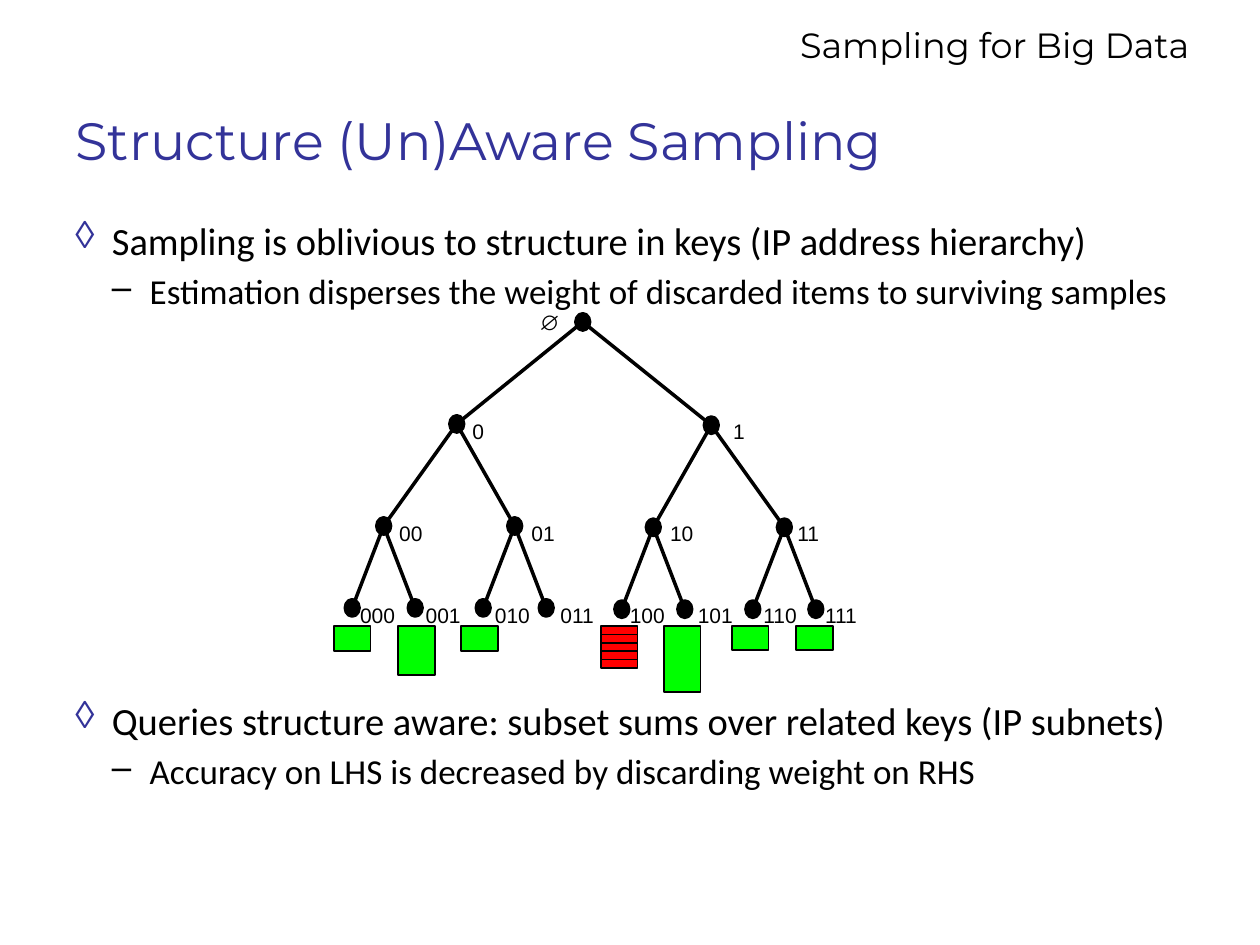
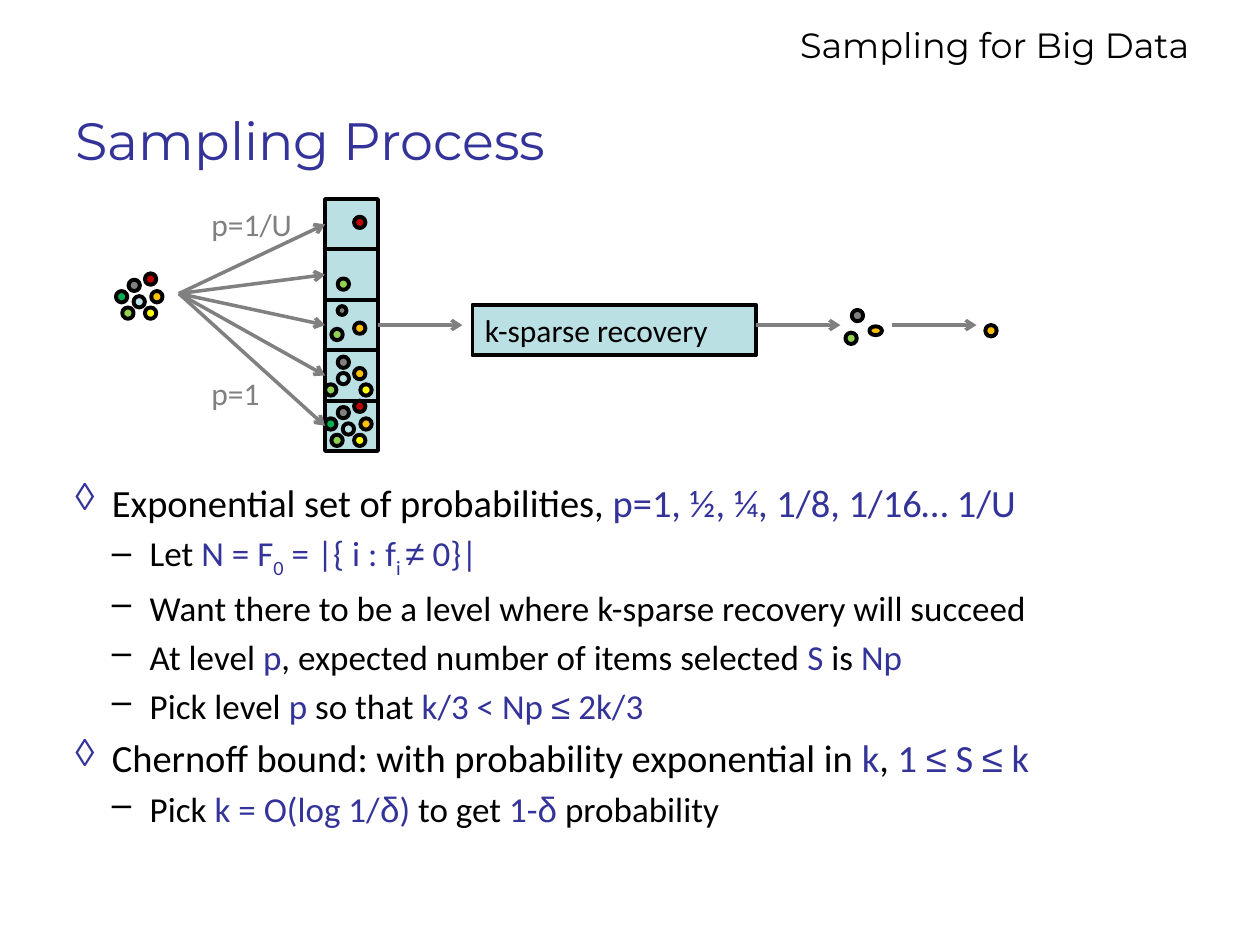
from itertools import groupby

from lxml import etree
from pptx import Presentation
from pptx import util as u
from pptx.dml.color import RGBColor
from pptx.enum import shapes, text
from pptx.oxml.ns import qn

COLORS = {
    "ink": "000000", "accent": "333399", "muted": "808080", "pale": "BBE0E3",
    "bar": "00FF00", "stripe": "FF0000", "lime": "92D050", "yellow": "FFFF00",
    "orange": "FFC000", "green": "00B050", "crimson": "C00000",
}
HEADING_FONT, BODY_FONT, LABEL_FONT = "Montserrat", "Calibri", "Arial"
ARIAL_SYMBOLS = "≠≤δ"
LEVELS = [("◊", 22, 0.29, 0.29), ("–", 20, 0.59, 0.3)]

NODE_W, NODE_H = 0.11, 0.13
LEVEL_TOPS = [2.49, 3.3, 4.11, 4.76]
BRANCHES = {"": 4.57, "0": 3.57, "1": 5.59,
            "00": 2.99, "01": 4.03, "10": 5.13, "11": 6.17}
LABEL_LEFTS = {
    "": 4.18, "0": 3.65, "1": 5.72, "00": 3.07, "01": 4.12, "10": 5.22, "11": 6.23,
    "000": 2.76, "001": 3.28, "010": 3.83, "011": 4.35,
    "100": 4.9, "101": 5.44, "110": 5.96, "111": 6.45,
}
LABEL_TOPS = [2.41, 3.27, 4.08, 4.73]
WEIGHTS = [(2.65, 0.2), (3.16, 0.39), (3.66, 0.2), (5.27, 0.52), (5.81, 0.19), (6.32, 0.19)]
WEIGHT_TOP, WEIGHT_W = 4.97, 0.29

CELL_LEFT, CELL_TOP, CELL_W, CELL_H = 2.58, 1.58, 0.42, 0.4
DOT = 0.09
ALL_ITEMS = [("lime", 0.05, 0.27), ("yellow", 0.23, 0.27), ("orange", 0.28, 0.14),
             ("pale", 0.14, 0.18), ("green", 0, 0.14), ("muted", 0.1, 0.05),
             ("crimson", 0.23, 0)]
CELL_ITEMS = [
    [("crimson", 0.23, 0.14)],
    [("lime", 0.1, 0.23)],
    [("orange", 0.23, 0.18), ("muted", 0.1, 0.05, 0.07, 0.07), ("lime", 0.05, 0.23)],
    [("yellow", 0.28, 0.27), ("orange", 0.23, 0.14), ("muted", 0.1, 0.05),
     ("pale", 0.1, 0.18), ("lime", 0, 0.27)],
    ALL_ITEMS,
]
RECOVERED = [("orange", 0.19, 0.13, 0.1, 0.07), ("muted", 0.05, 0), ("lime", 0, 0.18)]

OBLIVIOUS = [
    (0, [("Sampling is oblivious to structure in keys (IP address hierarchy)", "ink")]),
    (1, [("Estimation disperses the weight of discarded items to surviving samples", "ink")]),
]
AWARE = [
    (0, [("Queries structure aware: subset sums over related keys (IP subnets)", "ink")]),
    (1, [("Accuracy on LHS is decreased by discarding weight on RHS", "ink")]),
]
PROCESS = [
    (0, [("Exponential set of probabilities, ", "ink"),
         ("p=1, ½, ¼, 1/8, 1/16… 1/U", "accent")]),
    (1, [("Let ", "ink"), ("N = F", "accent"), ("0", "sub"),
         (" = |{ i : f", "accent"), ("i ", "sub"), ("≠ 0}|", "accent")]),
    (1, [("Want there to be a level where k-sparse recovery will succeed", "ink")]),
    (1, [("At level ", "ink"), ("p", "accent"), (", expected number of items selected ", "ink"),
         ("S", "accent"), (" is ", "ink"), ("Np", "accent")]),
    (1, [("Pick level ", "ink"), ("p", "accent"), (" so that ", "ink"),
         ("k/3 < Np ≤ 2k/3", "accent")]),
    (0, [("Chernoff bound: with probability exponential in ", "ink"), ("k", "accent"),
         (", ", "ink"), ("1 ≤ S ≤ k", "accent")]),
    (1, [("Pick ", "ink"), ("k = O(log 1/δ) ", "accent"), ("to get ", "ink"),
         ("1-δ", "accent"), (" probability", "ink")]),
]


def rgb(name):
    return RGBColor.from_string(COLORS[name])


def add_span(para, words, size, font, color="ink"):
    span = para.add_run()
    span.text = words
    span.font.size = u.Pt(size)
    span.font.name = font
    span.font.color.rgb = rgb(color)
    return span


def add_label(page, words, left, top, width, height, size, font, color="ink",
              align=text.PP_ALIGN.LEFT):
    box = page.shapes.add_textbox(*map(u.Inches, (left, top, width, height)))
    box.text_frame.word_wrap = True
    para = box.text_frame.paragraphs[0]
    para.alignment = align
    add_span(para, words, size, font, color)


def add_page(deck, heading):
    page = deck.slides.add_slide(deck.slide_layouts[5])
    title = page.shapes.title
    title.left, title.top, title.width, title.height = map(u.Inches, (0.5, 0.67, 9, 0.88))
    frame = title.text_frame
    frame.auto_size = text.MSO_AUTO_SIZE.NONE
    frame.vertical_anchor = text.MSO_ANCHOR.MIDDLE
    frame.paragraphs[0].alignment = text.PP_ALIGN.LEFT
    add_span(frame.paragraphs[0], heading, 30, HEADING_FONT, "accent")
    add_label(page, "Sampling for Big Data", 6.01, 0.14, 3.53, 0.77, 20, HEADING_FONT,
              align=text.PP_ALIGN.RIGHT)
    return page


def set_bullet(para, level):
    mark, size, margin, hang = LEVELS[level]
    para.level = level
    para.space_before = u.Pt(size * 0.2)
    props = para._p.get_or_add_pPr()
    props.set("marL", str(u.Inches(margin)))
    props.set("indent", str(-u.Inches(hang)))
    if level == 0:
        tint = etree.SubElement(props, qn("a:buClr"))
        etree.SubElement(tint, qn("a:srgbClr"), val=COLORS["accent"])
    etree.SubElement(props, qn("a:buChar"), char=mark)


def add_bullets(page, items, top, height):
    box = page.shapes.add_textbox(*map(u.Inches, (0.5, top, 9, height)))
    frame = box.text_frame
    frame.word_wrap = True
    for index, (level, pieces) in enumerate(items):
        para = frame.add_paragraph() if index else frame.paragraphs[0]
        set_bullet(para, level)
        for words, style in pieces:
            color = "accent" if style == "sub" else style
            for symbol, letters in groupby(words, lambda letter: letter in ARIAL_SYMBOLS):
                font = LABEL_FONT if symbol else BODY_FONT
                span = add_span(para, "".join(letters), LEVELS[level][1], font, color)
                if style == "sub":
                    span._r.get_or_add_rPr().set("baseline", "-25000")


def add_figure(page, kind, left, top, width, height, fill, weight):
    figure = page.shapes.add_shape(kind, *map(u.Inches, (left, top, width, height)))
    figure.shadow.inherit = False
    figure.fill.solid()
    figure.fill.fore_color.rgb = rgb(fill)
    figure.line.color.rgb = rgb("ink")
    figure.line.width = u.Pt(weight)
    return figure


def add_rect(page, left, top, width, height, fill, weight):
    return add_figure(page, shapes.MSO_SHAPE.RECTANGLE, left, top, width, height, fill, weight)


def add_line(page, start, end, color, arrow=False):
    line = page.shapes.add_connector(shapes.MSO_CONNECTOR.STRAIGHT,
                                     *map(u.Inches, (*start, *end)))
    line.line.color.rgb = rgb(color)
    line.line.width = u.Pt(2)
    if arrow:
        etree.SubElement(line.line._get_or_add_ln(), qn("a:tailEnd"), type="arrow")
    etree.SubElement(line._element.spPr, qn("a:effectLst"))
    return line


def add_dots(page, items, left, top):
    for color, dx, dy, *size in items:
        width, height = size or (DOT, DOT)
        add_figure(page, shapes.MSO_SHAPE.OVAL, left + dx, top + dy, width, height, color, 2.25)


def node_corner(key):
    if len(key) < 3:
        left = BRANCHES[key]
    else:
        left = BRANCHES[key[:2]] + (0.25 if key[2] == "1" else -0.25)
    return left, LEVEL_TOPS[len(key)] + (0.01 if key.startswith("1") else 0)


def node_center(key):
    left, top = node_corner(key)
    return left + NODE_W / 2, top + NODE_H / 2


def add_tree(page):
    for key, label_left in LABEL_LEFTS.items():
        if key:
            add_line(page, node_center(key[:-1]), node_center(key), "ink")
        add_figure(page, shapes.MSO_SHAPE.OVAL, *node_corner(key), NODE_W, NODE_H, "ink", 2)
        add_label(page, key or "∅", label_left, LABEL_TOPS[len(key)], 0.83, 0.3, 12, LABEL_FONT)


def add_weights(page):
    for left, height in WEIGHTS:
        add_rect(page, left, WEIGHT_TOP, WEIGHT_W, height, "bar", 1)
    stripe = 0.33 / 5
    for index in range(5):
        add_rect(page, 4.77, WEIGHT_TOP + index * stripe, WEIGHT_W, stripe, "stripe", 1)


def add_sampling_levels(page):
    add_dots(page, ALL_ITEMS, 0.92, 2.17)
    tops = [CELL_TOP + row * CELL_H for row in range(len(CELL_ITEMS))]
    cells = [add_rect(page, CELL_LEFT, top, CELL_W, CELL_H, "pale", 2.25) for top in tops]
    for cell, top, items in zip(cells, tops, CELL_ITEMS):
        add_dots(page, items, CELL_LEFT, top)
        arrow = add_line(page, (1.42, 2.33), (CELL_LEFT, top + CELL_H / 2), "muted", True)
        arrow.end_connect(cell, 1)
    add_label(page, "p=1", 1.58, 2.92, 0.8, 0.4, 18, BODY_FONT, "muted")
    add_label(page, "p=1/U", 1.58, 1.58, 1, 0.4, 18, BODY_FONT, "muted")
    return cells


def add_recovery(page, source_cell):
    box = add_rect(page, 3.75, 2.42, 2.25, 0.4, "pale", 2.25)
    box.text_frame.word_wrap = True
    box.text_frame.vertical_anchor = text.MSO_ANCHOR.TOP
    para = box.text_frame.paragraphs[0]
    para.alignment = text.PP_ALIGN.LEFT
    add_span(para, "k-sparse recovery", 18, BODY_FONT)
    arrows = [add_line(page, (left, 2.58), (left + 0.67, 2.58), "muted", True)
              for left in (3, 6, 7.08)]
    arrows[0].begin_connect(source_cell, 3)
    add_dots(page, RECOVERED, 6.71, 2.46)
    add_dots(page, [("orange", 0, 0)], 7.82, 2.58)


def main():
    deck = Presentation()
    deck.slide_width, deck.slide_height = u.Inches(10), u.Inches(7.5)

    page = add_page(deck, "Structure (Un)Aware Sampling")
    add_bullets(page, OBLIVIOUS, 1.67, 0.9)
    add_bullets(page, AWARE, 5.48, 0.9)
    add_tree(page)
    add_weights(page)

    page = add_page(deck, "Sampling Process")
    add_bullets(page, PROCESS, 3.75, 2.67)
    cells = add_sampling_levels(page)
    add_recovery(page, cells[2])

    deck.save("out.pptx")


if __name__ == "__main__":
    main()
